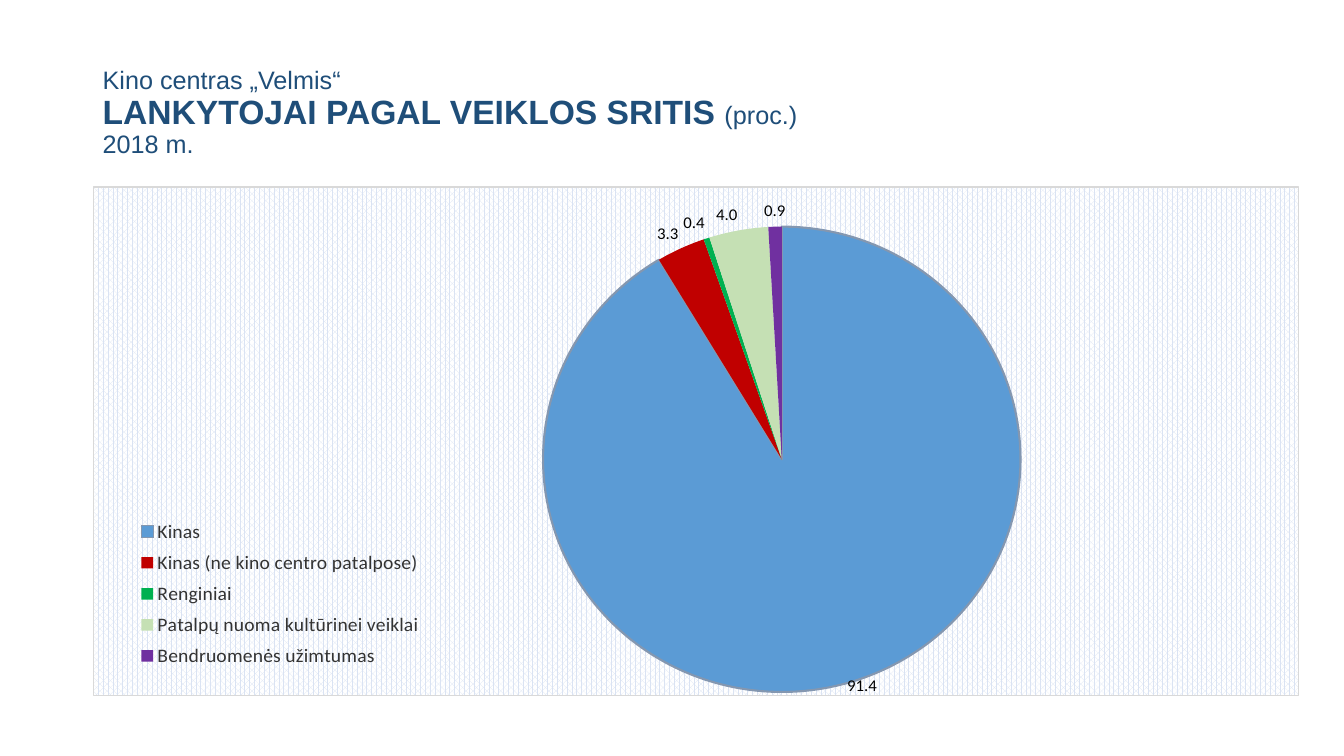
from dataclasses import dataclass

from pptx import Presentation
from pptx.chart.data import CategoryChartData
from pptx.dml.color import RGBColor
from pptx.enum.chart import XL_CHART_TYPE, XL_LABEL_POSITION, XL_LEGEND_POSITION
from pptx.enum.text import MSO_ANCHOR
from pptx.oxml import parse_xml
from pptx.oxml.ns import nsdecls, qn
from pptx.util import Inches, Pt


@dataclass(frozen=True)
class Theme:
    head_font: str = "Arial"
    body_font: str = "Calibri"
    navy: str = "1F4E79"
    black: str = "000000"
    gray: str = "333333"
    frame: str = "D9D9D9"
    rim: str = "8497B0"
    tint: str = "DAE3F3"
    white: str = "FFFFFF"
    big: int = 24
    mid: int = 18
    key: int = 14
    label: int = 12


THEME = Theme()
SLICES = [
    ("Kinas", 91.4, "5B9BD5"),
    ("Kinas (ne kino centro patalpose)", 3.3, "C00000"),
    ("Renginiai", 0.4, "00B050"),
    ("Patalpų nuoma kultūrinei veiklai", 4.0, "C5E0B4"),
    ("Bendruomenės užimtumas", 0.9, "7030A0"),
]


def style(font, name, size, color, bold=False):
    font.name, font.size, font.bold = name, Pt(size), bold
    font.color.rgb = RGBColor.from_string(color)


def add_title(slide, lines):
    """Add one paragraph of broken lines, each a list of (text, size, bold)."""
    box = slide.shapes.add_textbox(Inches(0.92), Inches(0.4), Inches(11.5), Inches(1.45))
    frame = box.text_frame
    frame.word_wrap = True
    frame.vertical_anchor = MSO_ANCHOR.MIDDLE
    para = frame.paragraphs[0]
    para.line_spacing = 0.9
    for i, line in enumerate(lines):
        if i:
            para.add_line_break()
        for text, size, bold in line:
            run = para.add_run()
            run.text = text
            style(run.font, THEME.head_font, size, THEME.navy, bold)


def place(node, index, box, inner=False):
    """Lay out a chart part by fractions of the chart's width and height."""
    for old in node.findall(qn("c:layout")):
        node.remove(old)
    target = '<c:layoutTarget val="inner"/>' if inner else ""
    modes = "".join(f'<c:{key}Mode val="edge"/>' for key in "xy")
    sizes = "".join(f'<c:{key} val="{val}"/>' for key, val in zip("xywh", box))
    node.insert(index, parse_xml(
        f'<c:layout {nsdecls("c")}><c:manualLayout>{target}{modes}{sizes}'
        "</c:manualLayout></c:layout>"))


def fill_area(chart):
    """Give the chart area its pattern and border."""
    area = parse_xml(
        f'<c:spPr {nsdecls("c", "a")}><a:pattFill prst="pct70">'
        f'<a:fgClr><a:srgbClr val="{THEME.tint}"/></a:fgClr>'
        f'<a:bgClr><a:srgbClr val="{THEME.white}"/></a:bgClr></a:pattFill>'
        f'<a:ln w="{Pt(0.75)}"><a:solidFill><a:srgbClr val="{THEME.frame}"/>'
        "</a:solidFill></a:ln></c:spPr>")
    chart.element.find(qn("c:chart")).addnext(area)


def add_pie(slide):
    data = CategoryChartData(number_format="0.0")
    data.categories = [name for name, _, _ in SLICES]
    data.add_series("Series 1", [value for _, value, _ in SLICES])
    chart = slide.shapes.add_chart(
        XL_CHART_TYPE.PIE, Inches(0.92), Inches(1.85), Inches(11.96), Inches(5.18), data).chart
    chart.has_title = False
    style(chart.font, THEME.body_font, 10, THEME.black)
    fill_area(chart)
    root = chart.element.find(qn("c:chart"))
    place(root.find(qn("c:plotArea")), 0, (0.149, 0.078, 0.845, 0.915), True)

    chart.has_legend = True
    legend = chart.legend
    legend.position = XL_LEGEND_POSITION.BOTTOM
    legend.include_in_layout = False
    style(legend.font, THEME.body_font, THEME.key, THEME.gray)
    place(root.find(qn("c:legend")), 1, (0.02, 0.64, 0.27, 0.32))

    plot = chart.plots[0]
    plot.vary_by_categories = True
    plot.has_data_labels = True
    labels = plot.data_labels
    labels.show_value = True
    labels.show_percentage = False
    labels.number_format = "0.0"
    labels.number_format_is_linked = False
    labels.position = XL_LABEL_POSITION.OUTSIDE_END
    style(labels.font, THEME.body_font, THEME.label, THEME.black)
    for i, (_, _, color) in enumerate(SLICES):
        form = plot.series[0].points[i].format
        form.fill.solid()
        form.fill.fore_color.rgb = RGBColor.from_string(color)
        if i:
            form.line.fill.background()
        else:
            form.line.color.rgb = RGBColor.from_string(THEME.rim)
            form.line.width = Pt(1.5)


def main():
    deck = Presentation()
    deck.slide_width, deck.slide_height = Inches(13.33), Inches(7.5)
    slide = deck.slides.add_slide(deck.slide_layouts[6])
    add_title(slide, [
        [("Kino centras „Velmis“", THEME.mid, False)],
        [("LANKYTOJAI PAGAL VEIKLOS SRITIS ", THEME.big, True), ("(proc.)", THEME.mid, False)],
        [("2018 m.", THEME.mid, False)],
    ])
    add_pie(slide)
    deck.save("out.pptx")


if __name__ == "__main__":
    main()
